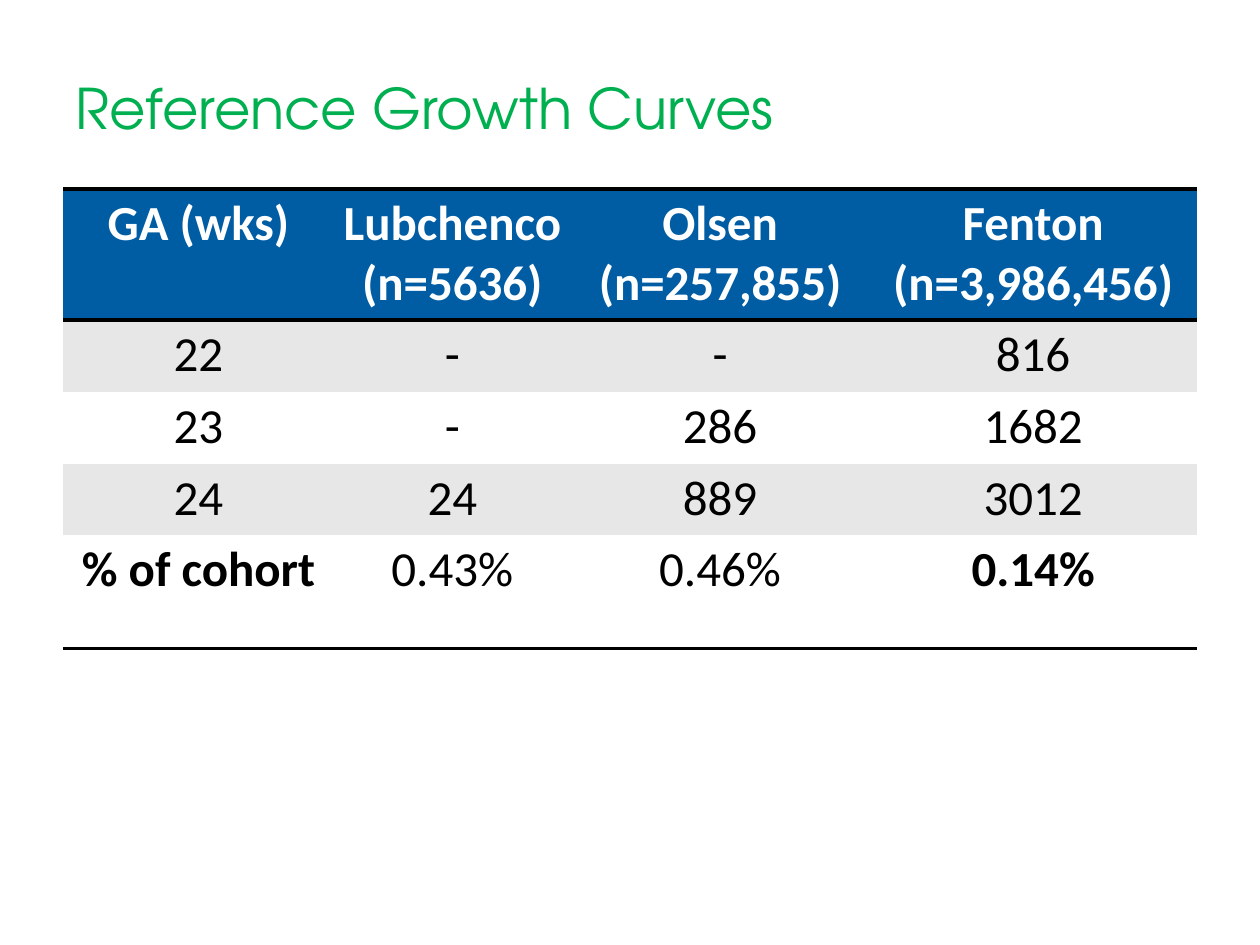
from lxml.etree import SubElement
from pptx import Presentation
from pptx.dml.color import RGBColor
from pptx.enum.text import MSO_ANCHOR, MSO_AUTO_SIZE, PP_ALIGN
from pptx.oxml.ns import qn
from pptx.util import Inches, Pt

WIDTH, HEIGHT = Inches(10), Inches(7.5)
LEFT, SPAN = 0.05, 0.9  # shares of the slide width
PLAIN_TABLE_STYLE = "{2D5ABB26-0587-4C30-8999-92F81FD0307C}"
BLUE, GRAY, WHITE, BLACK, GREEN = "005DA4", "E7E7E7", "FFFFFF", "000000", "00B050"

COLUMN_WIDTHS = [2.15, 1.88, 2.37, 2.6]
ROW_HEIGHTS = [1.04, 0.57, 0.57, 0.57, 0.9]
ROWS = [
    ["GA (wks)", "Lubchenco\n(n=5636)", "Olsen\n(n=257,855)", "Fenton\n(n=3,986,456)"],
    ["22", "-", "-", "816"],
    ["23", "-", "286", "1682"],
    ["24", "24", "889", "3012"],
    ["% of cohort", "0.43%", "0.46%", "0.14%"],
]
BOLD_TOTALS = {"% of cohort", "0.14%"}


def color(value):
    return RGBColor.from_string(value)


def write(frame, text, *, size, font, fill, bold=False, align=PP_ALIGN.LEFT):
    """Fill a text frame, one paragraph for each line of text."""
    for index, line in enumerate(text.split("\n")):
        para = frame.paragraphs[0] if index == 0 else frame.add_paragraph()
        para.alignment = align
        span = para.add_run()
        span.text = line
        span.font.size = Pt(size)
        span.font.name = font
        span.font.bold = bold
        span.font.color.rgb = color(fill)


def add_border(cell, side, value=BLACK, points=2):
    line = SubElement(cell._tc.get_or_add_tcPr(), qn(f"a:ln{side}"), w=str(Pt(points)))
    SubElement(SubElement(line, qn("a:solidFill")), qn("a:srgbClr"), val=value)


def add_title(page, text):
    title = page.shapes.title
    title.left, title.top = int(WIDTH * LEFT), int(HEIGHT * 0.04)
    title.width, title.height = int(WIDTH * SPAN), Inches(0.87)
    frame = title.text_frame
    frame.auto_size = MSO_AUTO_SIZE.NONE
    frame.vertical_anchor = MSO_ANCHOR.BOTTOM
    write(frame, text, size=32, font="TeX Gyre Adventor", fill=GREEN)


def style_cell(cell, text, row):
    header, last = row == 0, row == len(ROWS) - 1
    cell.margin_left = cell.margin_right = Inches(0.07)
    cell.margin_top = cell.margin_bottom = Inches(0.04)
    # Rules frame the header and close the table
    if header:
        add_border(cell, "T")
    if header or last:
        add_border(cell, "B")
    cell.fill.solid()
    cell.fill.fore_color.rgb = color(BLUE if header else GRAY if row % 2 else WHITE)
    write(cell.text_frame, text, size=28, font="Calibri",
          fill=WHITE if header else BLACK,
          bold=header or text in BOLD_TOTALS, align=PP_ALIGN.CENTER)


def add_growth_table(page):
    box = page.shapes.add_table(
        len(ROWS), len(COLUMN_WIDTHS), int(WIDTH * LEFT), int(HEIGHT * 0.2),
        int(WIDTH * SPAN), Inches(sum(ROW_HEIGHTS)))
    table = box.table
    table._tbl.tblPr.find(qn("a:tableStyleId")).text = PLAIN_TABLE_STYLE
    for column, width in zip(table.columns, COLUMN_WIDTHS):
        column.width = Inches(width)
    for row, height in zip(table.rows, ROW_HEIGHTS):
        row.height = Inches(height)
    for row, texts in enumerate(ROWS):
        for column, text in enumerate(texts):
            style_cell(table.cell(row, column), text, row)


def main():
    deck = Presentation()
    deck.slide_width, deck.slide_height = WIDTH, HEIGHT
    page = deck.slides.add_slide(deck.slide_layouts[5])
    add_title(page, "Reference Growth Curves")
    add_growth_table(page)
    deck.save("out.pptx")


if __name__ == "__main__":
    main()
